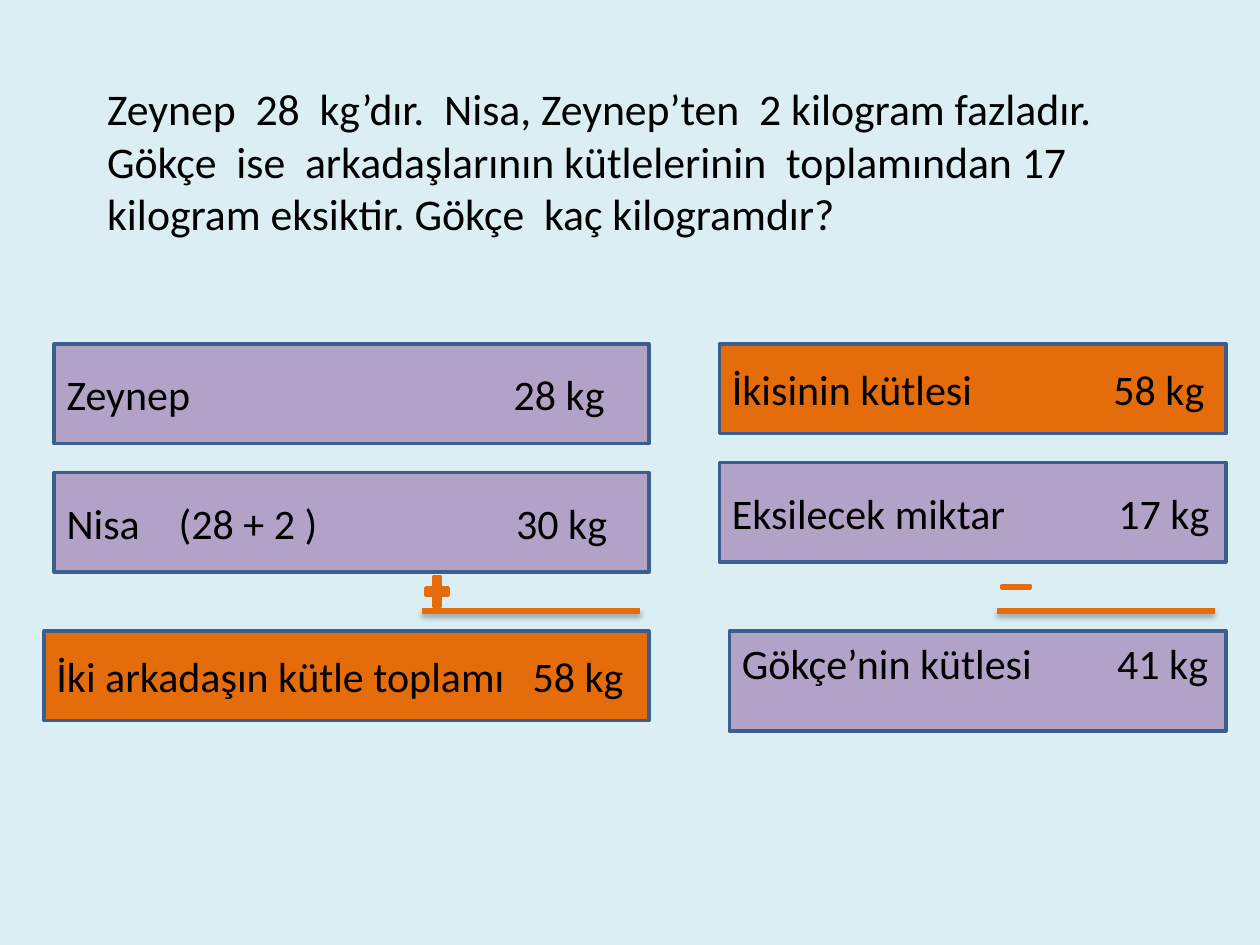
"""Build a slide that solves a word problem about mass in two column sums."""
from lxml import etree
from pptx import Presentation
from pptx.dml.color import RGBColor
from pptx.enum.shapes import MSO_CONNECTOR, MSO_SHAPE
from pptx.enum.text import MSO_ANCHOR, MSO_AUTO_SIZE, PP_ALIGN
from pptx.oxml import parse_xml
from pptx.oxml.ns import nsdecls, qn
from pptx.util import Inches, Pt

RECT, PLUS, MINUS = MSO_SHAPE.RECTANGLE, MSO_SHAPE.MATH_PLUS, MSO_SHAPE.MATH_MINUS
STRAIGHT = MSO_CONNECTOR.STRAIGHT
TOP, MIDDLE = MSO_ANCHOR.TOP, MSO_ANCHOR.MIDDLE
LEFT, NONE = PP_ALIGN.LEFT, MSO_AUTO_SIZE.NONE
ORANGE, PURPLE, NAVY, BLUE = "E46C0A", "B3A2C7", "3A5F8C", "4F81BD"
SHADOW = (
    f'<a:effectLst {nsdecls("a")}><a:outerShdw blurRad="40000" dist="23000" '
    'dir="5400000" rotWithShape="0"><a:srgbClr val="000000">'
    '<a:alpha val="35000"/></a:srgbClr></a:outerShdw></a:effectLst>'
)


def paint(part, color):
    """Give a fill or a font a solid colour."""
    if hasattr(part, "solid"):
        part.solid()
        part.fore_color.rgb = RGBColor.from_string(color)
    else:
        part.color.rgb = RGBColor.from_string(color)


def write(shape, text, size=24, anchor=MIDDLE, tabs=()):
    """Put left-aligned text in a shape, with (place, side) tab stops."""
    frame = shape.text_frame
    frame.word_wrap = True
    frame.auto_size = NONE
    frame.vertical_anchor = anchor
    para = frame.paragraphs[0]
    para.alignment = LEFT
    if tabs:
        stops = etree.SubElement(para._p.get_or_add_pPr(), qn("a:tabLst"))
        for place, side in tabs:
            etree.SubElement(stops, qn("a:tab"), pos=str(Inches(place)), algn=side)
    run = para.add_run()
    run.text = text
    run.font.name = "Calibri"
    run.font.size = Pt(size)
    paint(run.font, "000000")


deck = Presentation()
deck.slide_width, deck.slide_height = Inches(10), Inches(7.5)
slide = deck.slides.add_slide(deck.slide_layouts[5])
paint(slide.background.fill, "DBEEF4")
shapes = slide.shapes

title = shapes.title
title.left, title.top = Inches(0.75), Inches(0.29)
title.width, title.height = Inches(8.9), Inches(1.97)
write(
    title,
    "Zeynep  28  kg’dır.  Nisa, Zeynep’ten  2 kilogram fazladır. "
    "Gökçe  ise  arkadaşlarının kütlelerinin  toplamından 17 "
    "kilogram eksiktir. Gökçe  kaç kilogramdır?",
    size=25,
)

rows = [
    ("Zeynep\t28 kg", 0.43, 2.73, 4.72, 0.79, PURPLE, MIDDLE, [(4.27, "r")]),
    ("Nisa\t(28 + 2 )\t30 kg", 0.43, 3.75, 4.72, 0.79, PURPLE, MIDDLE,
     [(0.89, "l"), (4.29, "r")]),
    ("İki arkadaşın kütle toplamı\t58 kg", 0.35, 5.01, 4.8, 0.71, ORANGE, MIDDLE,
     [(4.5, "r")]),
    ("İkisinin kütlesi\t58 kg", 5.71, 2.73, 4.02, 0.71, ORANGE, MIDDLE, [(3.75, "r")]),
    ("Eksilecek miktar\t17 kg", 5.71, 3.67, 4.02, 0.79, PURPLE, MIDDLE, [(3.79, "r")]),
    ("Gökçe’nin kütlesi\t41 kg", 5.79, 5.01, 3.94, 0.79, PURPLE, TOP, [(3.7, "r")]),
]
for text, x, y, w, h, color, anchor, tabs in rows:
    box = shapes.add_shape(RECT, Inches(x), Inches(y), Inches(w), Inches(h))
    box.shadow.inherit = False
    paint(box.fill, color)
    paint(box.line.fill, NAVY)
    box.line.width = Pt(2)
    write(box, text, anchor=anchor, tabs=tabs)

sums = [
    (3.35, PLUS, 4.54, 0.24, 0.31, ORANGE),
    (7.91, MINUS, 4.62, 0.31, 0.08, BLUE),
]
for x, kind, y, w, h, color in sums:
    rule = shapes.add_connector(
        STRAIGHT, Inches(x), Inches(4.85), Inches(x + 1.73), Inches(4.85)
    )
    paint(rule.line.fill, ORANGE)
    rule.line.width = Pt(3)
    rule._element.spPr.append(parse_xml(SHADOW))
    sign = shapes.add_shape(kind, Inches(x), Inches(y), Inches(w), Inches(h))
    sign.shadow.inherit = False
    paint(sign.fill, color)
    paint(sign.line.fill, ORANGE)
    sign.line.width = Pt(2)

deck.save("out.pptx")
